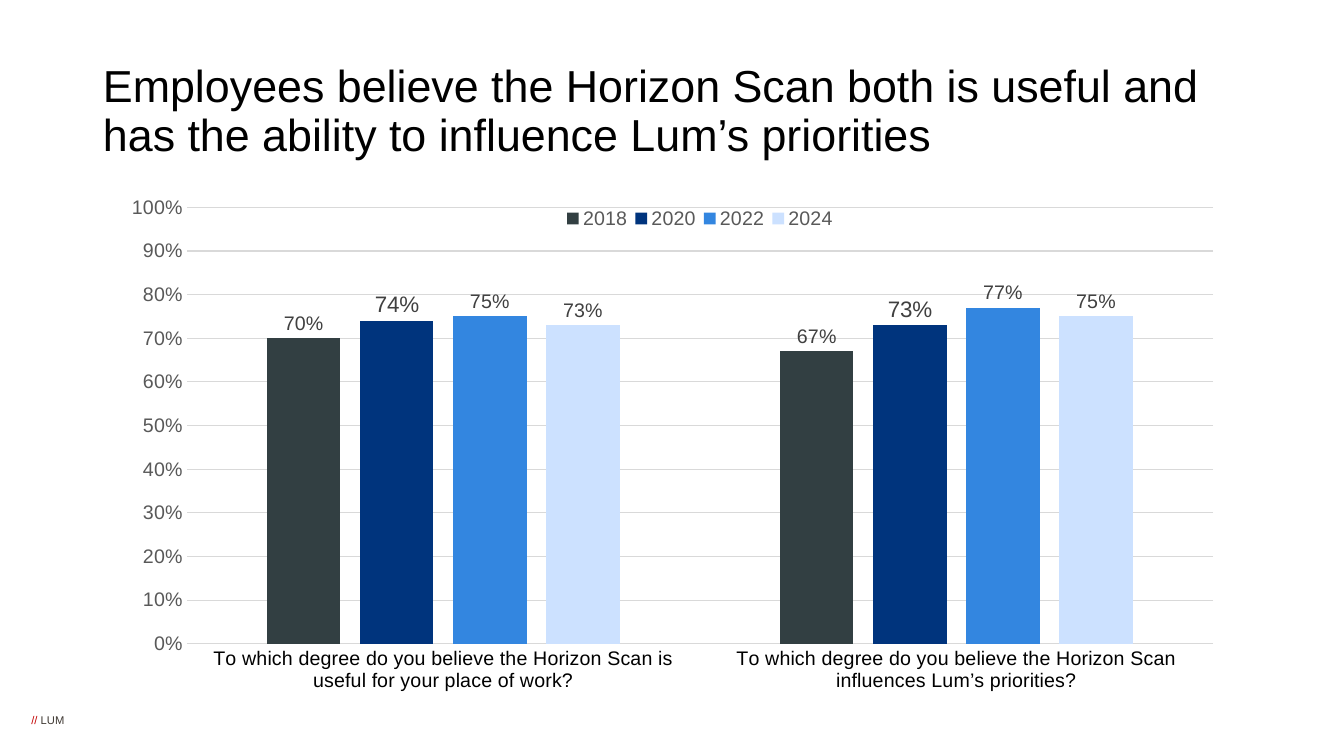
import pptx
import pptx.chart.data
import pptx.dml.color
import pptx.enum.chart
import pptx.enum.text
import pptx.oxml
import pptx.oxml.ns
import pptx.util

Cm, Pt = pptx.util.Cm, pptx.util.Pt
QUESTIONS = [
    "To which degree do you believe the Horizon Scan is useful for your place of work?",
    "To which degree do you believe the Horizon Scan influences Lum’s priorities?",
]
YEARS = [
    ("2018", [0.70, 0.67], "323F42", 14),
    ("2020", [0.74, 0.73], "00347D", 16),
    ("2022", [0.75, 0.77], "3386E0", 14),
    ("2024", [0.73, 0.75], "CCE1FF", 14),
]


def rgb(value):
    return pptx.dml.color.RGBColor.from_string(value)


def set_font(font, size, color):
    font.name = "Arial"
    font.size = Pt(size)
    font.bold = False
    font.color.rgb = rgb(color)


def add_text(paragraph, text, size=14, color="000000"):
    run = paragraph.add_run()
    run.text = text
    set_font(run.font, size, color)


def set_layout(parent, position, x, y, w, h, target=""):
    for old in parent.findall(pptx.oxml.ns.qn("c:layout")):
        parent.remove(old)
    parent.insert(position, pptx.oxml.parse_xml(
        f'<c:layout {pptx.oxml.ns.nsdecls("c")}><c:manualLayout>{target}'
        '<c:xMode val="edge"/><c:yMode val="edge"/>'
        f'<c:x val="{x}"/><c:y val="{y}"/><c:w val="{w}"/><c:h val="{h}"/>'
        "</c:manualLayout></c:layout>"))


class SurveySlide:
    """Holds the style and the current slide, and adds its elements."""

    grid = "D9D9D9"
    muted = "595959"
    label = "404040"

    def __init__(self, deck):
        self.slide = deck.slides.add_slide(deck.slide_layouts[5])

    def title(self, text, left, top, width, height):
        heading = self.slide.shapes.title
        heading.left, heading.top = Cm(left), Cm(top)
        heading.width, heading.height = Cm(width), Cm(height)
        frame = heading.text_frame
        frame.auto_size = pptx.enum.text.MSO_AUTO_SIZE.NONE
        frame.vertical_anchor = pptx.enum.text.MSO_ANCHOR.MIDDLE
        paragraph = frame.paragraphs[0]
        paragraph.alignment = pptx.enum.text.PP_ALIGN.LEFT
        paragraph.line_spacing = 0.9
        add_text(paragraph, text, size=32)

    def footer(self, parts, left, top, width, height):
        mark = self.slide.shapes.add_textbox(Cm(left), Cm(top), Cm(width), Cm(height))
        frame = mark.text_frame
        frame.word_wrap = True
        frame.margin_left = Cm(0.1)
        frame.margin_right = frame.margin_top = frame.margin_bottom = 0
        for text, color in parts:
            add_text(frame.paragraphs[0], text, size=8, color=color)

    def axis(self, axis, color):
        axis.major_tick_mark = axis.minor_tick_mark = pptx.enum.chart.XL_TICK_MARK.NONE
        set_font(axis.tick_labels.font, 14, color)

    def line(self, line):
        line.color.rgb = rgb(self.grid)
        line.width = Pt(0.75)

    def columns(self, questions, years, left, top, width, height):
        answers = pptx.chart.data.CategoryChartData(number_format="0%")
        answers.categories = questions
        for year, shares, _, _ in years:
            answers.add_series(year, shares)
        chart = self.slide.shapes.add_chart(
            pptx.enum.chart.XL_CHART_TYPE.COLUMN_CLUSTERED,
            Cm(left), Cm(top), Cm(width), Cm(height), answers).chart
        set_font(chart.font, 10, "000000")
        chart.has_title = False

        self.axis(chart.category_axis, "000000")
        self.line(chart.category_axis.format.line)
        shares_axis = chart.value_axis
        self.axis(shares_axis, self.muted)
        shares_axis.minimum_scale, shares_axis.maximum_scale = 0, 1
        shares_axis.major_unit = 0.1
        shares_axis.tick_labels.number_format = "0%"
        shares_axis.tick_labels.number_format_is_linked = False
        shares_axis.format.line.fill.background()
        self.line(shares_axis.major_gridlines.format.line)

        plot = chart.plots[0]
        plot.gap_width, plot.overlap = 219, -27
        plot.vary_by_categories = False
        for series, (_, _, color, size) in zip(plot.series, years):
            series.format.fill.solid()
            series.format.fill.fore_color.rgb = rgb(color)
            labels = series.data_labels
            labels.show_value = True
            labels.number_format = "0%"
            labels.number_format_is_linked = False
            labels.position = pptx.enum.chart.XL_LABEL_POSITION.OUTSIDE_END
            set_font(labels.font, size, self.label)

        chart.has_legend = True
        chart.legend.position = pptx.enum.chart.XL_LEGEND_POSITION.BOTTOM
        chart.legend.include_in_layout = False
        set_font(chart.legend.font, 14, self.muted)
        plot_area = chart.element.find(".//" + pptx.oxml.ns.qn("c:plotArea"))
        legend = chart.element.find(".//" + pptx.oxml.ns.qn("c:legend"))
        set_layout(plot_area, 0, 0.07, 0.04, 0.91, 0.79, '<c:layoutTarget val="inner"/>')
        set_layout(legend, 1, 0.4, 0.04, 0.25, 0.04)


def main():
    deck = pptx.Presentation()
    deck.slide_width, deck.slide_height = Cm(33.87), Cm(19.05)
    survey = SurveySlide(deck)
    survey.footer([("// ", "C30000"), ("LUM", "3E3832")], 0.69, 17.98, 1.2, 0.33)
    survey.title("Employees believe the Horizon Scan both is useful and has the ability "
                 "to influence Lum’s priorities", 2.34, 1.35, 29.21, 2.97)
    survey.columns(QUESTIONS, YEARS, 2.72, 4.67, 28.42, 13.92)
    deck.save("out.pptx")


if __name__ == "__main__":
    main()
